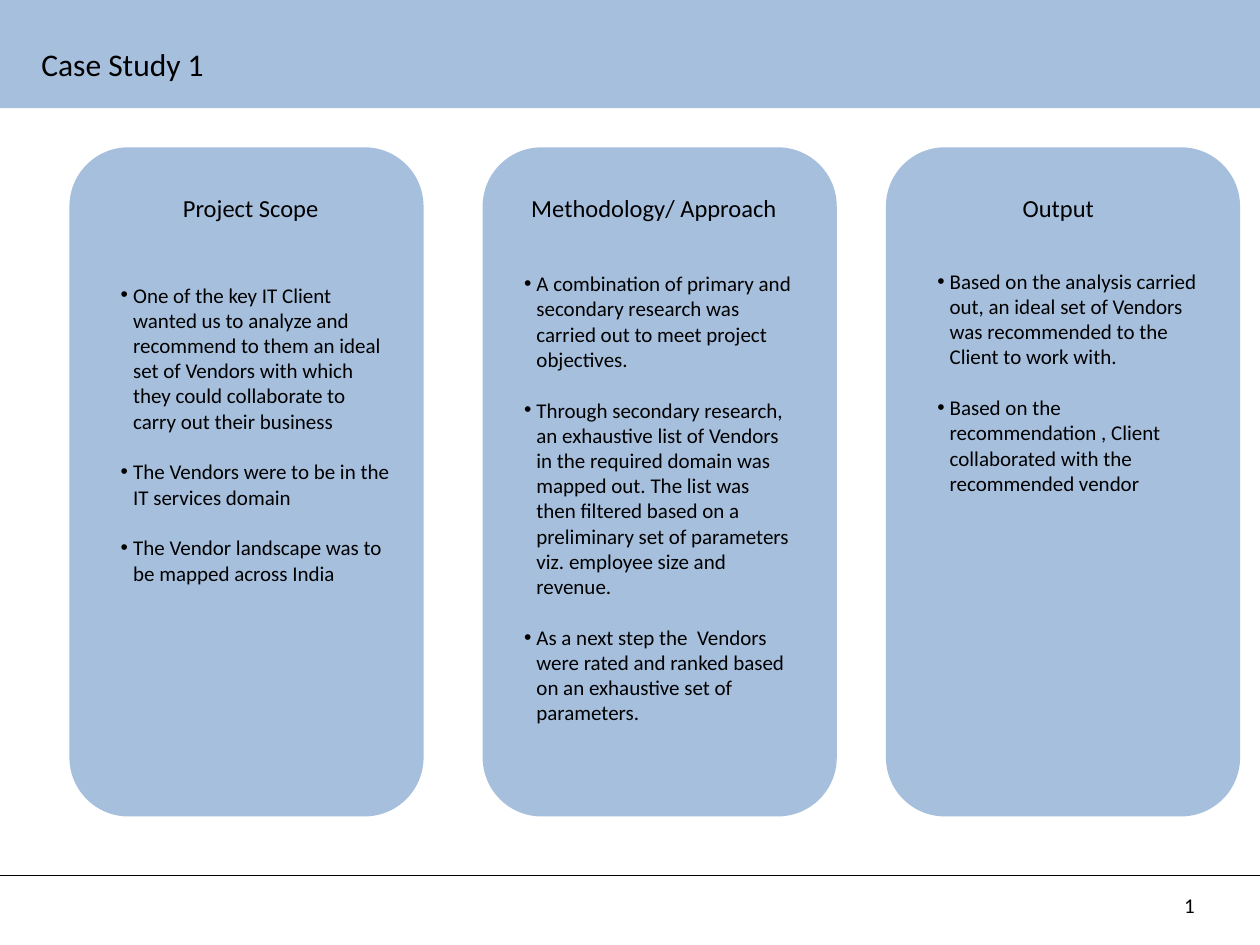
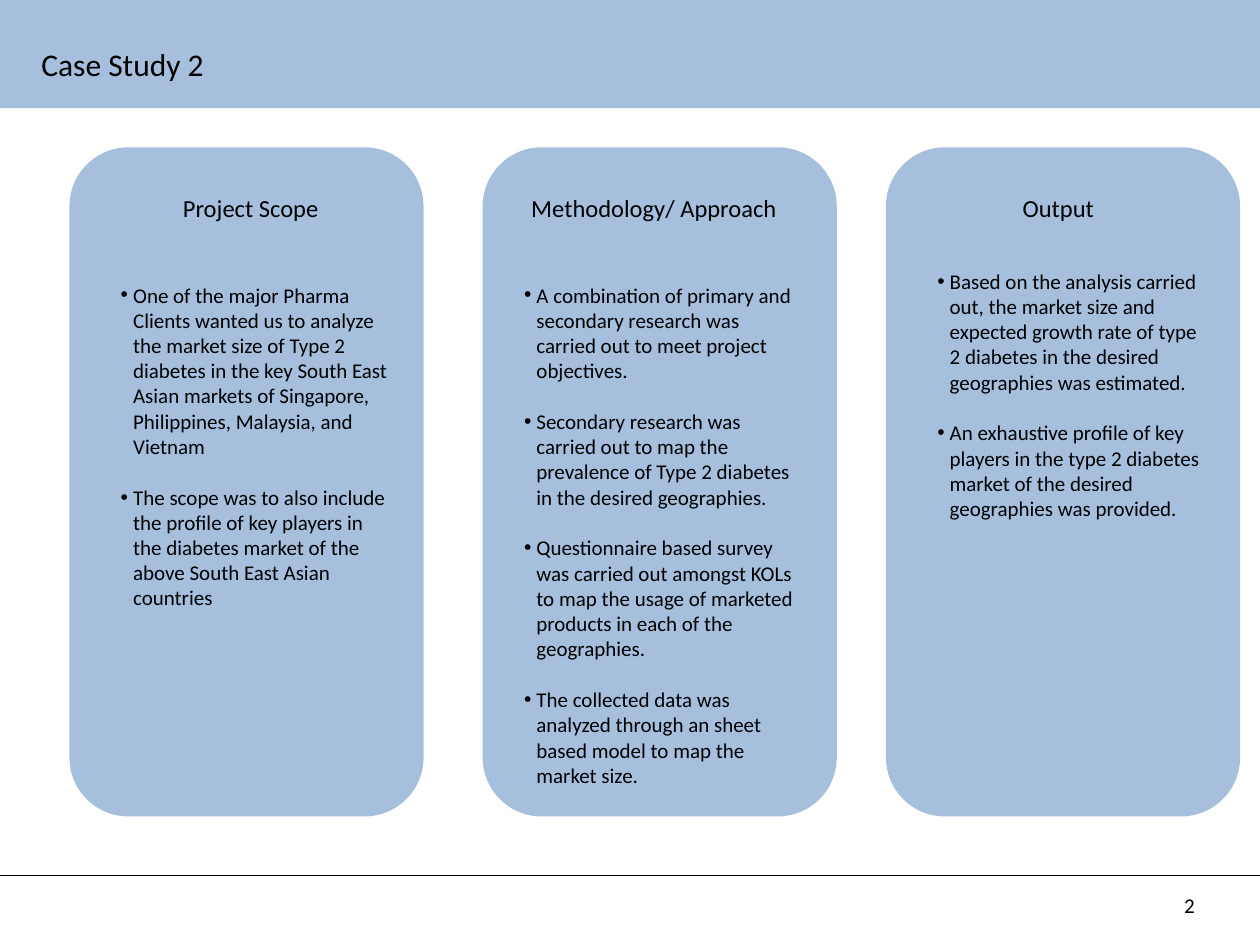
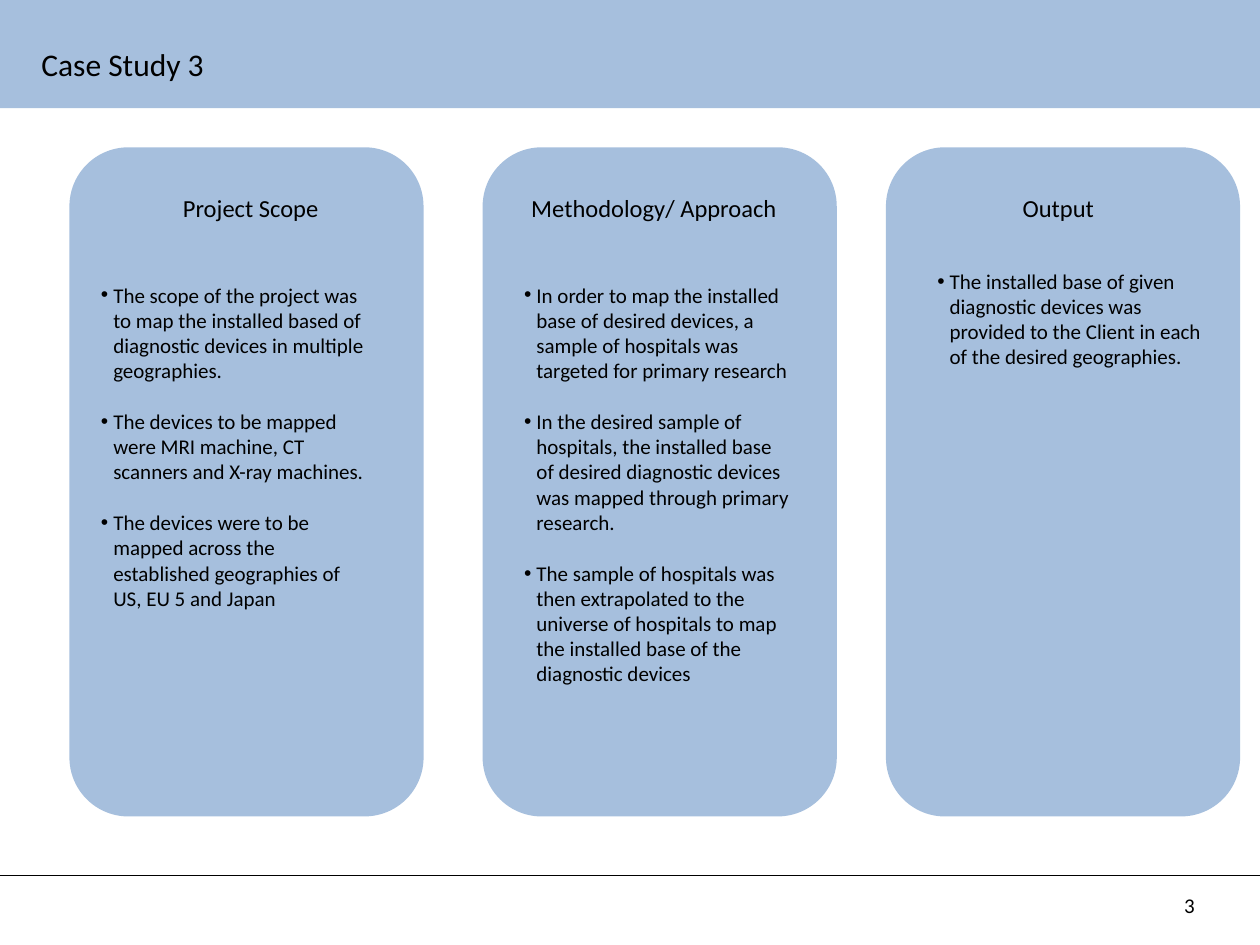
from dataclasses import dataclass

from lxml.etree import SubElement
from pptx import Presentation
from pptx.dml.color import RGBColor
from pptx.enum.shapes import MSO_CONNECTOR, MSO_SHAPE
from pptx.enum.text import MSO_ANCHOR, MSO_AUTO_SIZE, PP_ALIGN
from pptx.oxml.ns import qn
from pptx.util import Cm, Pt

COLORS = {"panel": "4F81BD", "ink": "000000"}
FONT = "Calibri"
WIDTH, HEIGHT = Cm(25.4), Cm(19.05)
BAND_HEIGHT, RULE_TOP = Cm(2.18), Cm(17.65)
CARD_TOP, CARD_WIDTH, CARD_HEIGHT = Cm(2.97), Cm(7.14), Cm(13.49)
HEADING_TOP, HEADING_WIDTH, HEADING_HEIGHT = Cm(3.76), Cm(6.15), Cm(0.86)
LIST_WIDTH, LIST_INDENT = Cm(5.94), Cm(0.25)
LINE_GAP = Pt(14.65)
BACK = 2  # first drawable position in a shape tree


@dataclass(frozen=True)
class Column:
    heading: str
    card_left: float
    heading_left: float
    list_left: float
    list_top: float


@dataclass(frozen=True)
class Findings:
    """The bullets of one column; left and top override the column's own."""
    height: float
    points: tuple[str, ...]
    left: float | None = None
    top: float | None = None


COLUMNS = (
    Column("Project Scope", 1.4, 1.98, 2.18, 5.56),
    Column("Methodology/ Approach", 9.73, 10.11, 10.31, 5.56),
    Column("Output", 17.86, 18.26, 18.64, 5.28),
)

CASES = (
    (
        Findings(6.93, (
            "One of the key IT Client wanted us to analyze and recommend to them an ideal set "
            "of Vendors with which they could collaborate to carry out their business",
            "The Vendors were to be in the IT services domain",
            "The Vendor landscape was to be mapped across India",
        )),
        Findings(10.01, (
            "A combination of primary and secondary research was carried out to meet project "
            "objectives.",
            "Through secondary research, an exhaustive list of Vendors in the required domain "
            "was mapped out. The list was then filtered based on a preliminary set of "
            "parameters viz. employee size and revenue.",
            "As a next step the  Vendors were rated and ranked based on an exhaustive set of "
            "parameters.",
        ), top=5.33),
        Findings(4.88, (
            "Based on the analysis carried out, an ideal set of Vendors was recommended to the "
            "Client to work with.",
            "Based on the recommendation , Client collaborated with the recommended vendor",
        )),
    ),
    (
        Findings(6.93, (
            "One of the major Pharma Clients wanted us to analyze the market size of Type 2 "
            "diabetes in the key South East Asian markets of Singapore, Philippines, Malaysia, "
            "and Vietnam",
            "The scope was to also include the profile of key players in the diabetes market "
            "of the above South East Asian countries",
        )),
        Findings(10.52, (
            "A combination of primary and secondary research was carried out to meet project "
            "objectives.",
            "Secondary research was carried out to map the prevalence of Type 2 diabetes in "
            "the desired geographies.",
            "Questionnaire based survey was carried out amongst KOLs to map the usage of "
            "marketed products in each of the geographies.",
            "The collected data was analyzed through an sheet based model to map the market "
            "size.",
        )),
        Findings(5.38, (
            "Based on the analysis carried out, the market size and expected growth rate of "
            "type 2 diabetes in the desired geographies was estimated.",
            "An exhaustive profile of key players in the type 2 diabetes market of the desired "
            "geographies was provided.",
        )),
    ),
    (
        Findings(6.93, (
            "The scope of the project was to map the installed based of diagnostic devices in "
            "multiple geographies.",
            "The devices to be mapped were MRI machine, CT scanners and X-ray machines.",
            "The devices were to be mapped across the established geographies of US, EU 5 and "
            "Japan",
        ), left=1.78),
        Findings(8.46, (
            "In order to map the installed base of desired devices, a sample of hospitals was "
            "targeted for primary research",
            "In the desired sample of hospitals, the installed base of desired diagnostic "
            "devices was mapped through primary research.",
            "The sample of hospitals was then extrapolated to the universe of hospitals to map "
            "the installed base of the diagnostic devices",
        )),
        Findings(2.31, (
            "The installed base of given diagnostic devices was provided to the Client in each "
            "of the desired geographies.",
        )),
    ),
)


def place(shape, left: int, top: int, width: int, height: int) -> None:
    shape.left, shape.top, shape.width, shape.height = left, top, width, height


def write(shape, *lines: str, size: float = 12, align=PP_ALIGN.LEFT,
          bulleted: bool = False) -> None:
    """Fill a shape with one paragraph per line, all in the same format."""
    frame = shape.text_frame
    frame.word_wrap = True
    frame.vertical_anchor = MSO_ANCHOR.TOP
    frame.auto_size = MSO_AUTO_SIZE.SHAPE_TO_FIT_TEXT
    for index, line in enumerate(lines):
        paragraph = frame.add_paragraph() if index else frame.paragraphs[0]
        paragraph.alignment = align
        paragraph.space_before = LINE_GAP if index else Pt(0)
        run = paragraph.add_run()
        run.text = line
        run.font.name, run.font.size, run.font.bold = FONT, Pt(size), False
        run.font.color.rgb = RGBColor.from_string(COLORS["ink"])
        if bulleted:
            properties = paragraph._p.get_or_add_pPr()
            properties.set("marL", str(LIST_INDENT))
            properties.set("indent", str(-LIST_INDENT))
            SubElement(properties, qn("a:buChar")).set("char", "•")


def add_panel(slide, preset, left: int, top: int, width: int, height: int):
    panel = slide.shapes.add_shape(preset, left, top, width, height)
    panel.shadow.inherit = False
    panel.fill.solid()
    panel.fill.fore_color.rgb = RGBColor.from_string(COLORS["panel"])
    panel.line.fill.background()
    tint = panel.element.spPr.find(f".//{qn('a:srgbClr')}")
    SubElement(tint, qn("a:alpha")).set("val", "50000")
    return panel


def furnish_master(master, slide) -> None:
    """Draw the band and the footer rule, then hand them to the master."""
    rule = slide.shapes.add_connector(MSO_CONNECTOR.STRAIGHT, 0, RULE_TOP, WIDTH, RULE_TOP)
    rule.line.color.rgb = RGBColor.from_string(COLORS["ink"])
    rule.line.width = Pt(0.5)
    SubElement(rule.element.spPr, qn("a:effectLst"))
    band = add_panel(slide, MSO_SHAPE.RECTANGLE, 0, 0, WIDTH, BAND_HEIGHT)
    for depth, part in enumerate((rule, band), BACK):
        master.shapes.element.insert(depth, part.element)


def add_column(slide, position: int, column: Column, findings: Findings) -> None:
    card = add_panel(slide, MSO_SHAPE.ROUNDED_RECTANGLE, Cm(column.card_left), CARD_TOP,
                     CARD_WIDTH, CARD_HEIGHT)
    slide.shapes.element.insert(BACK + position, card.element)
    heading = slide.shapes.add_textbox(Cm(column.heading_left), HEADING_TOP,
                                       HEADING_WIDTH, HEADING_HEIGHT)
    write(heading, column.heading, size=14, align=PP_ALIGN.CENTER)
    bullets = slide.placeholders[position + 1]
    place(bullets, Cm(findings.left or column.list_left), Cm(findings.top or column.list_top),
          LIST_WIDTH, Cm(findings.height))
    write(bullets, *findings.points, bulleted=True)


def add_case(deck, number: int, case: tuple[Findings, ...]):
    slide = deck.slides.add_slide(deck.slide_layouts.get_by_name("Comparison"))
    place(slide.shapes.title, Cm(0.58), Cm(0.79), Cm(10.92), Cm(1.02))
    write(slide.shapes.title, f"Case Study {number}", size=18)
    for position, (column, findings) in enumerate(zip(COLUMNS, case)):
        add_column(slide, position, column, findings)
    unused = slide.placeholders[len(COLUMNS) + 1].element
    unused.getparent().remove(unused)
    page = slide.shapes.add_textbox(Cm(23.62), Cm(17.86), Cm(1.19), Cm(0.76))
    write(page, str(number))
    return slide


def main() -> None:
    deck = Presentation()
    deck.slide_width, deck.slide_height = WIDTH, HEIGHT
    slides = [add_case(deck, number, case) for number, case in enumerate(CASES, 1)]
    furnish_master(deck.slide_master, slides[0])
    deck.save("out.pptx")


if __name__ == "__main__":
    main()
